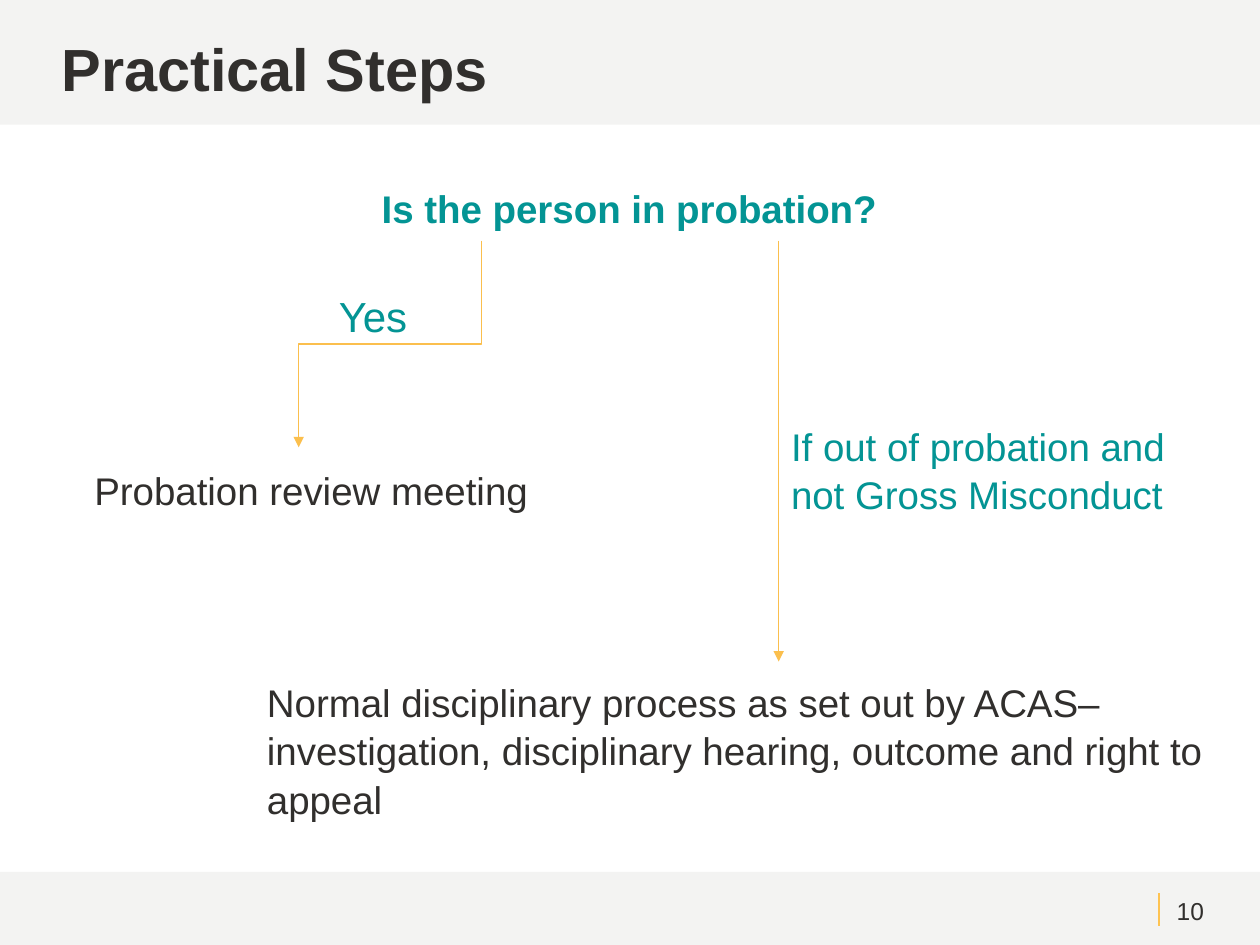
from lxml.etree import SubElement
from pptx import Presentation
from pptx.dml.color import RGBColor
from pptx.enum.shapes import MSO_CONNECTOR as Link, MSO_SHAPE as Shape
from pptx.enum.text import MSO_ANCHOR as Anchor, MSO_AUTO_SIZE as Fit, PP_ALIGN as Align
from pptx.oxml.ns import qn
from pptx.util import Inches, Pt

DARK = RGBColor(0x31, 0x2F, 0x2D)
TEAL = RGBColor(0x03, 0x94, 0x94)
GREY = RGBColor(0xF3, 0xF3, 0xF2)
AMBER = RGBColor(0xFB, 0xBF, 0x4D)
GOLD = RGBColor(0xFE, 0xC3, 0x52)
FONT = "Arial"

# Content: text, box, size, colour, bold, wrap, alignment
TITLE = "Practical Steps"
LABELS = [
    ("10", (9.24, 7.05, 0.45, 0.4), 14, DARK, False, True, Align.LEFT),
    ("Yes", (2.59, 2.24, 1.01, 0.5), 24, TEAL, False, True, Align.LEFT),
    ("Normal disciplinary process as set out by ACAS– investigation, "
     "disciplinary hearing, outcome and right to appeal",
     (2.02, 5.32, 7.69, 1.51), 22, DARK, False, True, Align.LEFT),
    ("If out of probation and not Gross Misconduct",
     (6.18, 3.29, 3.53, 0.84), 22, TEAL, False, True, Align.LEFT),
    ("Probation review meeting",
     (0.65, 3.64, 3.69, 0.47), 22, DARK, False, False, Align.LEFT),
    ("Is the person in probation?",
     (2.9, 1.4, 4.19, 0.47), 22, TEAL, True, False, Align.CENTER),
]
BARS = [(0, 0, 10, 0.99), (0, 6.92, 10, 0.61)]
FORK = 1.91  # height at which both branches leave the question


def inches(vals):
    return [Inches(v) for v in vals]


def write(frame, text, size, color, bold, align=Align.LEFT):
    para = frame.paragraphs[0]
    para.alignment = align
    para.line_spacing = 1.05
    para.space_before = Pt(0)
    run = para.add_run()
    run.text = text
    font = run.font
    font.name, font.size, font.bold = FONT, Pt(size), bold
    font.color.rgb = color


def link(kind, ends, color, width, arrow=True):
    line = slide.shapes.add_connector(kind, *inches(ends))
    line.line.color.rgb = color
    line.line.width = Pt(width)
    if arrow:
        SubElement(line.line._get_or_add_ln(), qn("a:tailEnd"), type="triangle")
    SubElement(line._element.spPr, qn("a:effectLst"))
    return line


deck = Presentation()
deck.slide_width, deck.slide_height = Inches(10), Inches(7.5)
slide = deck.slides.add_slide(deck.slide_layouts[5])

# Header and footer bars
for box in BARS:
    bar = slide.shapes.add_shape(Shape.RECTANGLE, *inches(box))
    bar.shadow.inherit = False
    bar.fill.solid()
    bar.fill.fore_color.rgb = GREY
    bar.line.fill.background()
link(Link.STRAIGHT, (9.2, 7.09, 9.2, 7.35), GOLD, 1, arrow=False)

# Title, brought in front of the header bar
title = slide.shapes.title
title.left, title.top, title.width, title.height = inches((0.39, 0.16, 9.22, 0.83))
frame = title.text_frame
frame.vertical_anchor = Anchor.TOP
frame.margin_top = Inches(0.07)
write(frame, TITLE, 34, DARK, True)
slide.shapes._spTree.append(title._element)

# Branches: the elbow is laid out flat, then turned a quarter about its centre
start, end = (3.82, FORK), (2.37, 3.55)
mid_x, mid_y = (start[0] + end[0]) / 2, (start[1] + end[1]) / 2
half_w, half_h = (end[1] - start[1]) / 2, (start[0] - end[0]) / 2
elbow = link(Link.ELBOW, (mid_x - half_w, mid_y - half_h,
                          mid_x + half_w, mid_y + half_h), AMBER, 0.75)
elbow._element.spPr.find(qn("a:xfrm")).set("rot", str(90 * 60000))
link(Link.STRAIGHT, (6.18, FORK, 6.18, 5.25), AMBER, 0.75)

# Labels
for text, box, size, color, bold, wrap, align in LABELS:
    frame = slide.shapes.add_textbox(*inches(box)).text_frame
    frame.word_wrap = wrap
    frame.auto_size = Fit.SHAPE_TO_FIT_TEXT
    write(frame, text, size, color, bold, align)

deck.save("out.pptx")
